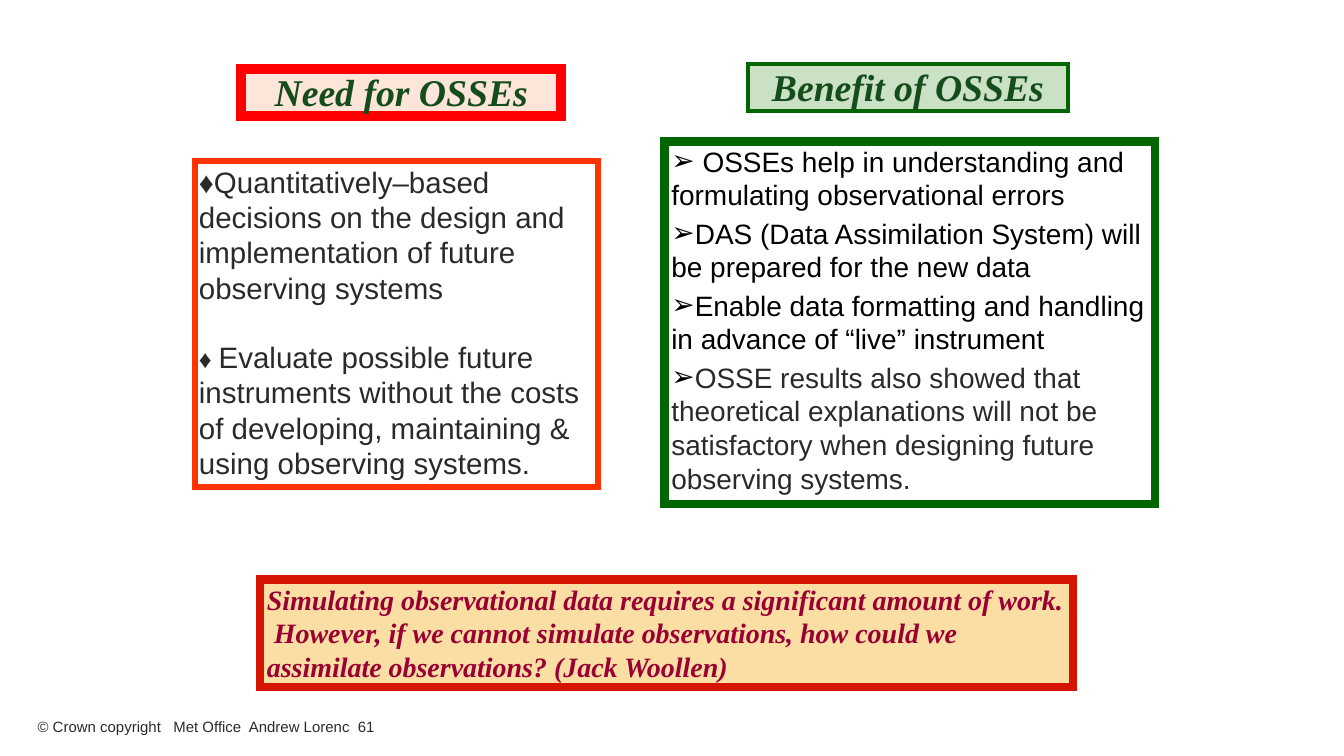
from lxml.etree import SubElement
from pptx import Presentation
from pptx.dml.color import RGBColor
from pptx.enum.text import MSO_ANCHOR, MSO_AUTO_SIZE, PP_ALIGN
from pptx.oxml.ns import qn
from pptx.util import Inches, Pt

COLORS = {
    "white": "FFFFFF", "black": "000000", "text": "2A2A2A",
    "heading": "144C1B", "quote": "990033", "green": "006600",
    "pale_green": "CBE1C5", "red": "FF0000", "pale_red": "FEE5DA",
    "orange": "FF3300", "sand": "FBDEA3", "brick": "D51501",
}
SERIF = {"name": "Times New Roman", "bold": True, "italic": True}
SANS = {"name": "Arial", "bold": False, "italic": False}

# Content: each paragraph is a list of (text, size, colour) runs
NEEDS = [
    [("♦Quantitatively–based decisions on the design and implementation "
      "of future observing systems", 15.8, "text")],
    [("♦ ", 13.5, "text"),
     ("Evaluate possible future instruments without the costs of developing, "
      "maintaining & using observing systems.", 15.8, "text")],
]
BENEFITS = [
    [(" OSSEs help in understanding and formulating observational errors", 15, "black")],
    [("DAS (Data Assimilation System) will be prepared for the new data", 15, "black")],
    [("Enable data formatting and handling in advance of “live” instrument", 15, "black")],
    [("OSSE results also showed that theoretical explanations will not be "
      "satisfactory when designing future observing systems.", 15, "text")],
]
QUOTE = [[("Simulating observational data requires a significant amount of work.  "
           "However, if we cannot simulate observations, how could we assimilate "
           "observations? (Jack Woollen)", 15, "quote")]]
FOOTER = [[("© Crown copyright   Met Office  Andrew Lorenc  61", 8, "text")]]

# Boxes: area is left, top, width, height in percent of the slide;
# a placeholder index of None means a text box
HEADING = {"font": SERIF, "align": PP_ALIGN.CENTER, "insets": (0.01, 0, 0.01, 0)}
BOXES = [
    {"placeholder": None, "area": (0, 92, 100, 8), "paragraphs": FOOTER,
     "font": SANS, "fill": "white", "insets": (0.28, 0.04, 0.07, 0.03),
     "anchor": MSO_ANCHOR.MIDDLE},
    {"placeholder": None, "area": (19.35, 76.65, 60.5, 14.2), "paragraphs": QUOTE,
     "font": SERIF, "fill": "sand", "line": ("brick", 4.5),
     "insets": (0.05, 0.02, 0.05, 0.02)},
    {"placeholder": 1, "area": (17.95, 9.1, 23.8, 6.2),
     "paragraphs": [[("Need for OSSEs", 20.2, "heading")]],
     "fill": "pale_red", "line": ("red", 5.25), **HEADING},
    {"placeholder": 2, "area": (14.5, 21.3, 30, 43.1), "paragraphs": NEEDS,
     "font": SANS, "line": ("orange", 3), "insets": (0.03, 0.02, 0.03, 0.02),
     "gap": 18.2},
    {"placeholder": 3, "area": (55.65, 8.5, 23.8, 6.2),
     "paragraphs": [[("Benefit of OSSEs", 20.2, "heading")]],
     "fill": "pale_green", "line": ("green", 2.25), **HEADING},
    {"placeholder": 4, "area": (49.45, 18.7, 36.5, 48), "paragraphs": BENEFITS,
     "font": SANS, "line": ("green", 4.5), "insets": (0.05, 0.02, 0.05, 0.02),
     "gap": 2.6, "bullet": "➢"},
]


def rgb(name):
    return RGBColor.from_string(COLORS[name])


def set_bullet(paragraph, bullet):
    properties = paragraph._p.get_or_add_pPr()
    properties.set("marL", "0")
    properties.set("indent", "0")
    if bullet:
        color = SubElement(properties, qn("a:buClr"))
        SubElement(color, qn("a:srgbClr"), val=COLORS["black"])
        SubElement(properties, qn("a:buChar"), char=bullet)
    else:
        SubElement(properties, qn("a:buNone"))


def write_text(frame, box):
    insets = [Inches(inset) for inset in box["insets"]]
    settings = {
        "word_wrap": True, "auto_size": MSO_AUTO_SIZE.NONE,
        "vertical_anchor": box.get("anchor", MSO_ANCHOR.TOP),
        **dict(zip(("margin_left", "margin_top", "margin_right", "margin_bottom"), insets)),
    }
    for name, value in settings.items():
        setattr(frame, name, value)
    for number, runs in enumerate(box["paragraphs"]):
        paragraph = frame.add_paragraph() if number else frame.paragraphs[0]
        set_bullet(paragraph, box.get("bullet"))
        paragraph.alignment = box.get("align", PP_ALIGN.LEFT)
        paragraph.space_before = Pt(box.get("gap", 0) if number else 0)
        for text, size, color in runs:
            run = paragraph.add_run()
            run.text = text
            for name, value in {**box["font"], "size": Pt(size)}.items():
                setattr(run.font, name, value)
            run.font.color.rgb = rgb(color)


# Widescreen slide, 16 to 9
presentation = Presentation()
presentation.slide_width = Inches(10)
presentation.slide_height = Inches(10) * 9 // 16

# The comparison layout holds two headings with a list below each
slide = presentation.slides.add_slide(presentation.slide_layouts[4])
placeholders = {shape.placeholder_format.idx: shape for shape in slide.placeholders}
title = placeholders[0]._element
title.getparent().remove(title)

for box in BOXES:
    sides = (presentation.slide_width, presentation.slide_height) * 2
    area = [int(side * share / 100) for side, share in zip(sides, box["area"])]
    if box["placeholder"] is None:
        shape = slide.shapes.add_textbox(*area)
    else:
        shape = placeholders[box["placeholder"]]
        shape.left, shape.top, shape.width, shape.height = area
    # Fill and outline with square corners
    if "fill" in box:
        shape.fill.solid()
        shape.fill.fore_color.rgb = rgb(box["fill"])
    if "line" in box:
        color, width = box["line"]
        shape.line.color.rgb = rgb(color)
        shape.line.width = Pt(width)
        SubElement(shape.line._get_or_add_ln(), qn("a:miter"), lim="800000")
    write_text(shape.text_frame, box)

presentation.save("out.pptx")
